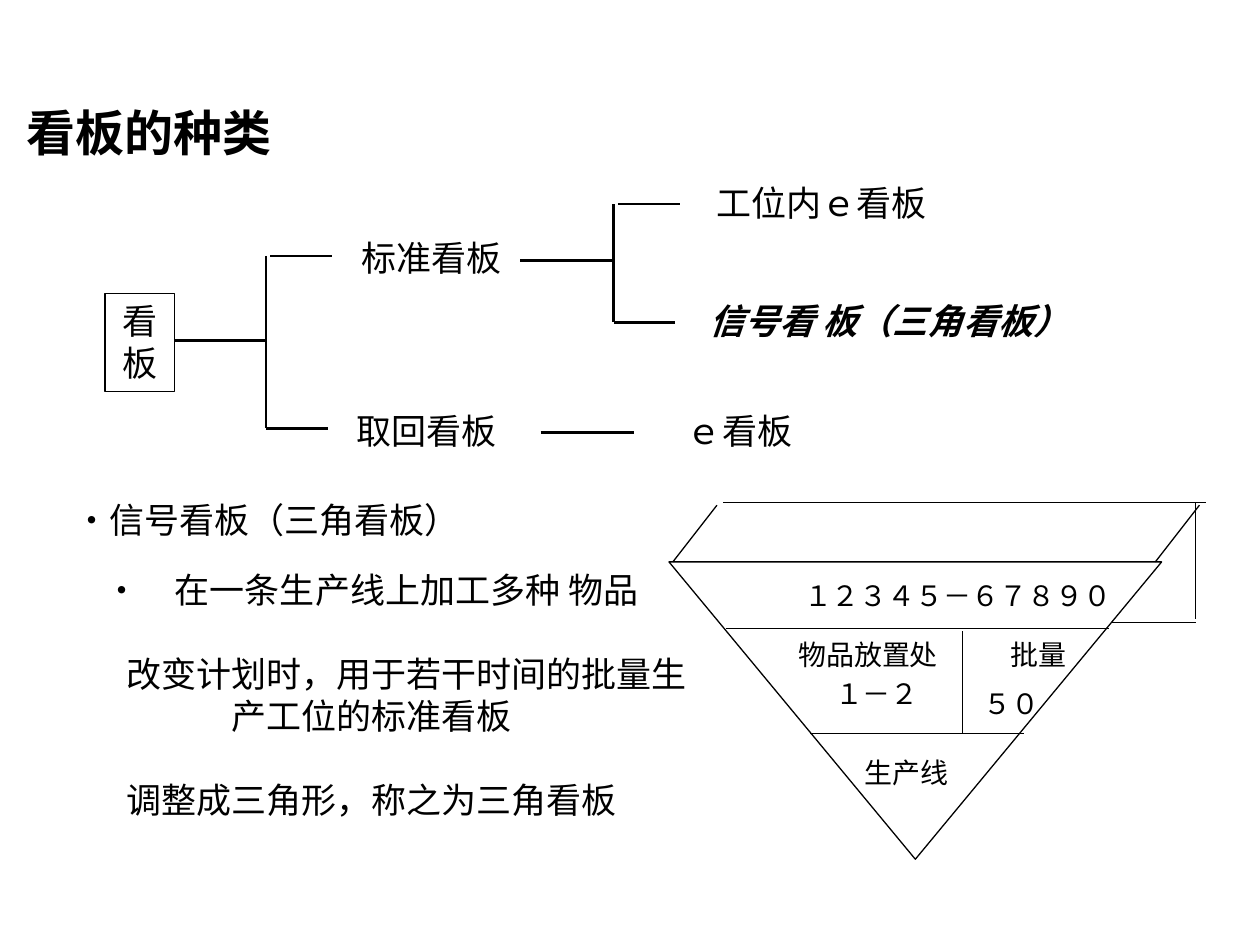
"""Build the slide on the types of kanban, with a tree and a triangular signal card."""
from lxml.etree import SubElement
from pptx import Presentation
from pptx.dml.color import RGBColor
from pptx.enum.shapes import MSO_CONNECTOR, MSO_SHAPE
from pptx.enum.text import MSO_ANCHOR, MSO_AUTO_SIZE, PP_ALIGN
from pptx.oxml.ns import qn
from pptx.util import Pt

THEME = {
    "font": "Times New Roman", "ink": RGBColor(0, 0, 0),
    "title": 28, "text": 20, "card": 16,
    "tree_line": 1.5, "root_line": 1, "card_line": 0.75,
}

TITLE = ("看板的种类", (0, 54.7, 170, 41))
BODY_BOX = (19.4, 321, 386, 113)
BODY = [
    ("・　在一条生产线上加工多种 物品", 0, 0),
    ("改变计划时，用于若干时间的批量生产工位的标准看板", 40, 24),
    ("调整成三角形，称之为三角看板", 0, 24),
]
ROOT = ("看板", (59.8, 167.8, 40, 56))
TREE_LABELS = [
    ("标准看板", (190, 131.8, 113, 31)),
    ("取回看板", (190, 230.4, 108, 31)),
    ("工位内ｅ看板", (388, 100, 163, 31)),
    ("ｅ看板", (377.3, 230.4, 90.7, 31)),
    ("・信号看板（三角看板）", (25.2, 281.5, 255, 31)),
]
SIGNAL_LABEL = ("信号看 板（三角看板）", (389.5, 167.8, 237, 31))
BRANCHES = [
    {"stem": 99.4, "spine": 152, "middle": 194.4, "top": 146.2, "bottom": 244.8},
    {"stem": 297.4, "spine": 350.6, "middle": 149, "top": 116.6, "bottom": 184.3},
]
ARM, TOP_SHIFT = 35.3, 2.5
WITHDRAWAL_LINK = (308.9, 247, 362.2, 247)

TRIANGLE = (382.3, 321.1, 281.5, 169.9)
CARD_LINES = [
    (409.7, 288.7, 384.5, 321.1),
    (685.4, 288.7, 660.2, 321.1),
    (413.3, 287.3, 689, 287.3),
    (683.3, 287.3, 683.3, 353.5),
    (683.3, 355.7, 635, 355.7),
    (414.7, 359.3, 633.6, 359.3),
    (463, 419, 585.4, 419),
    (550.1, 360.7, 550.1, 419),
]
CARD_LABELS = [
    ("１２３４５－６７８９０", (445, 326.9, 204.5, 26.6)),
    ("物品放置处", (445, 360.7, 102.2, 26.6)),
    ("批量", (564.5, 360.7, 58.3, 26.6)),
    ("１－２", (462.2, 383, 77.8, 26.6)),
    ("５０", (547.2, 388.8, 61.2, 26.6)),
    ("生产线", (484.6, 428.4, 67, 26.6)),
]


def points(values):
    return [Pt(value) for value in values]


def place(shape, box):
    shape.left, shape.top, shape.width, shape.height = points(box)


def format_frame(frame, anchor=MSO_ANCHOR.TOP):
    frame.word_wrap = True
    frame.auto_size = MSO_AUTO_SIZE.NONE
    frame.vertical_anchor = anchor
    frame.margin_left = frame.margin_right = Pt(7.2)
    frame.margin_top = frame.margin_bottom = Pt(3.6)


def format_paragraph(para, size, bold=False, italic=False):
    para.alignment = PP_ALIGN.CENTER
    font = para.font
    font.name, font.size = THEME["font"], Pt(THEME[size])
    font.bold, font.italic = bold, italic
    font.color.rgb = THEME["ink"]


def add_label(page, text, box, size, **style):
    frame = page.shapes.add_textbox(*points(box)).text_frame
    format_frame(frame)
    frame.text = text
    format_paragraph(frame.paragraphs[0], size, **style)


def add_line(page, ends, weight):
    line = page.shapes.add_connector(MSO_CONNECTOR.STRAIGHT, *points(ends))
    line.line.color.rgb = THEME["ink"]
    line.line.width = Pt(THEME[weight])
    SubElement(line._element.spPr, qn("a:effectLst"))


def add_outline(page, kind, box, weight):
    shape = page.shapes.add_shape(kind, *points(box))
    shape.shadow.inherit = False
    shape.fill.background()
    shape.line.color.rgb = THEME["ink"]
    shape.line.width = Pt(THEME[weight])
    return shape


def add_branch(page, stem, spine, middle, top, bottom):
    for ends in [
        (stem, middle, spine, middle),
        (spine, top, spine, bottom),
        (spine + TOP_SHIFT, top, spine + TOP_SHIFT + ARM, top),
        (spine, bottom, spine + ARM, bottom),
    ]:
        add_line(page, ends, "tree_line")


def fill_placeholders(page):
    title, body = page.shapes.title, page.placeholders[1]
    text, box = TITLE
    place(title, box)
    format_frame(title.text_frame)
    title.text_frame.text = text
    format_paragraph(title.text_frame.paragraphs[0], "title", bold=True)

    place(body, BODY_BOX)
    frame = body.text_frame
    format_frame(frame)
    frame.text = "\n".join(text for text, _, _ in BODY)
    for para, (_, indent, gap) in zip(frame.paragraphs, BODY):
        properties = para._p.get_or_add_pPr()
        properties.set("marL", "0")
        properties.set("indent", str(Pt(indent)))
        SubElement(properties, qn("a:buNone"))
        para.space_before = Pt(gap)
        format_paragraph(para, "text")


def draw_tree(page):
    text, box = ROOT
    root = add_outline(page, MSO_SHAPE.RECTANGLE, box, "root_line")
    format_frame(root.text_frame)
    root.text_frame.text = text
    format_paragraph(root.text_frame.paragraphs[0], "text")
    for branch in BRANCHES:
        add_branch(page, **branch)
    add_line(page, WITHDRAWAL_LINK, "tree_line")
    for text, box in TREE_LABELS:
        add_label(page, text, box, "text")
    add_label(page, *SIGNAL_LABEL, "text", bold=True, italic=True)


def draw_card(page):
    triangle = add_outline(page, MSO_SHAPE.FLOWCHART_EXTRACT, TRIANGLE, "card_line")
    triangle.rotation = 180
    for ends in CARD_LINES:
        add_line(page, ends, "card_line")
    for text, box in CARD_LABELS:
        add_label(page, text, box, "card")


def main():
    deck = Presentation()
    deck.slide_width, deck.slide_height = Pt(720), Pt(540)
    page = deck.slides.add_slide(deck.slide_layouts[1])
    fill_placeholders(page)
    draw_tree(page)
    draw_card(page)
    deck.save("out.pptx")


if __name__ == "__main__":
    main()
